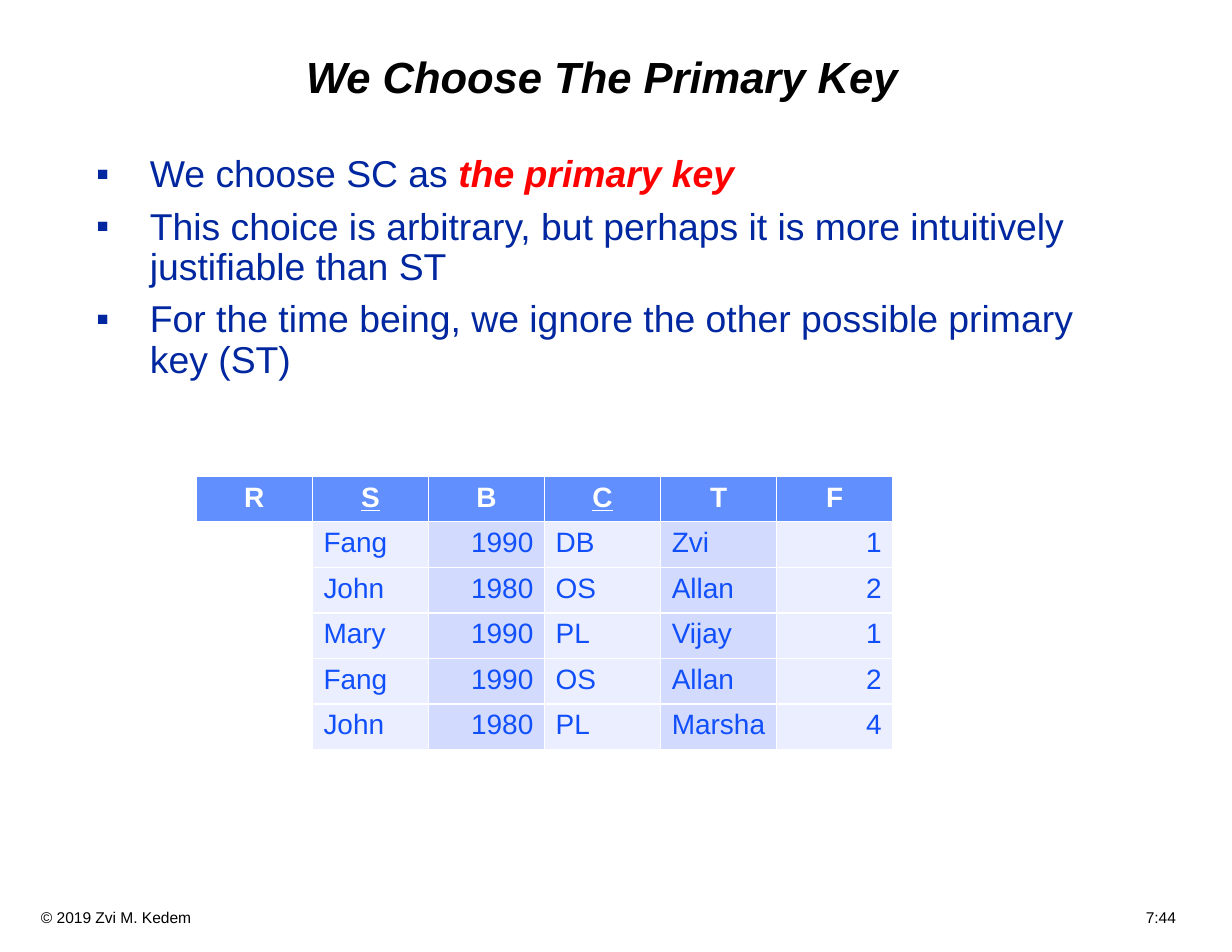
from lxml.etree import SubElement
from pptx import Presentation
from pptx.dml.color import RGBColor
from pptx.enum.text import MSO_ANCHOR, PP_ALIGN
from pptx.oxml.ns import qn
from pptx.util import Cm, Pt

TITLE = "We Choose The Primary Key"
BULLETS = [
    [("We choose SC as ", {}),
     ("the primary key", {"color": "FF0000", "bold": True, "italic": True})],
    [("This choice is arbitrary, but perhaps it is more intuitively justifiable than ST", {})],
    [("For the time being, we ignore the other possible primary key (ST)", {})],
]
HEADERS = ["R", "S", "B", "C", "T", "F"]
KEY_COLUMNS = {"S", "C"}
NUMBER_COLUMNS = {"B", "F"}
ROWS = [
    ("", "Fang", "1990", "DB", "Zvi", "1"),
    ("", "John", "1980", "OS", "Allan", "2"),
    ("", "Mary", "1990", "PL", "Vijay", "1"),
    ("", "Fang", "1990", "OS", "Allan", "2"),
    ("", "John", "1980", "PL", "Marsha", "4"),
]
FOOTER = "© 2019 Zvi M. Kedem\t7:44"

TITLE_FORMAT = {"size": Pt(28), "bold": True, "italic": True, "color": "000000"}
BODY_FORMAT = {"size": Pt(24), "color": "00279F"}
HEADER_FORMAT = {"size": Pt(18), "bold": True, "color": "FFFFFF"}
CELL_FORMAT = {"size": Pt(18), "bold": False, "color": "114FFB"}
FOOTER_FORMAT = {"size": Pt(10), "color": "000000"}

HEADER_FILL = "618FFD"
EMPTY_FILL = "FFFFFF"
COLUMN_FILLS = ["D2DBFE", "EAEEFF"]
TABLE_BOX = (4.45, 10.8, 15.8, 6.2)


def color(value):
    return RGBColor.from_string(value)


def add_run(paragraph, text, values):
    run = paragraph.add_run()
    run.text = text
    run.font.name = "Arial"
    for name, value in values.items():
        if name == "color":
            run.font.color.rgb = color(value)
        else:
            setattr(run.font, name, value)


def add_text_frame(slide, box, values):
    frame = slide.shapes.add_textbox(*map(Cm, box)).text_frame
    frame.word_wrap = True
    for name, value in values.items():
        setattr(frame, name, value)
    return frame


def add_title(slide):
    frame = add_text_frame(slide, (1.9, 0.64, 23.5, 2.33),
                           {"vertical_anchor": MSO_ANCHOR.MIDDLE})
    paragraph = frame.paragraphs[0]
    paragraph.alignment = PP_ALIGN.CENTER
    paragraph.line_spacing = 0.9
    add_run(paragraph, TITLE, TITLE_FORMAT)


def add_bullets(slide):
    frame = add_text_frame(slide, (1.9, 3.38, 23.7, 16.94),
                           {"margin_left": Cm(0.28), "margin_right": Cm(0.28),
                            "margin_top": Cm(0.15)})
    for index, runs in enumerate(BULLETS):
        paragraph = frame.add_paragraph() if index else frame.paragraphs[0]
        paragraph.line_spacing = 0.9
        paragraph.space_before = Pt(7.7)
        properties = paragraph._p.get_or_add_pPr()
        properties.set("marL", str(Cm(1.22)))
        properties.set("indent", str(-Cm(1.22)))
        bullet_color = SubElement(properties, qn("a:buClr"))
        SubElement(bullet_color, qn("a:srgbClr"), val=BODY_FORMAT["color"])
        SubElement(properties, qn("a:buFont"), typeface="Arial")
        SubElement(properties, qn("a:buChar"), char="▪")
        for text, emphasis in runs:
            add_run(paragraph, text, {**BODY_FORMAT, **emphasis})


def fill_cell(cell, text, fill, alignment, values):
    cell.fill.solid()
    cell.fill.fore_color.rgb = color(fill)
    paragraph = cell.text_frame.paragraphs[0]
    paragraph.alignment = alignment
    if text:
        add_run(paragraph, text, values)


def add_relation_table(slide):
    table = slide.shapes.add_table(len(ROWS) + 1, len(HEADERS), *map(Cm, TABLE_BOX)).table
    for column, header in enumerate(HEADERS):
        fill_cell(table.cell(0, column), header, HEADER_FILL, PP_ALIGN.CENTER,
                  {**HEADER_FORMAT, "underline": header in KEY_COLUMNS})
        fill = COLUMN_FILLS[column % 2] if column else EMPTY_FILL
        alignment = PP_ALIGN.RIGHT if header in NUMBER_COLUMNS else PP_ALIGN.LEFT
        for row, values in enumerate(ROWS, start=1):
            fill_cell(table.cell(row, column), values[column], fill, alignment, CELL_FORMAT)


def add_footer(slide):
    frame = add_text_frame(slide, (0, 20.47, 27.94, 0.69), {"margin_left": Cm(0.93)})
    paragraph = frame.paragraphs[0]
    tab_list = SubElement(paragraph._p.get_or_add_pPr(), qn("a:tabLst"))
    SubElement(tab_list, qn("a:tab"), pos=str(Cm(25.74)), algn="r")
    add_run(paragraph, FOOTER, FOOTER_FORMAT)


def main():
    presentation = Presentation()
    presentation.slide_width = Cm(27.94)
    presentation.slide_height = Cm(21.59)
    slide = presentation.slides.add_slide(presentation.slide_layouts[6])
    add_footer(slide)
    add_title(slide)
    add_bullets(slide)
    add_relation_table(slide)
    presentation.save("out.pptx")


if __name__ == "__main__":
    main()
